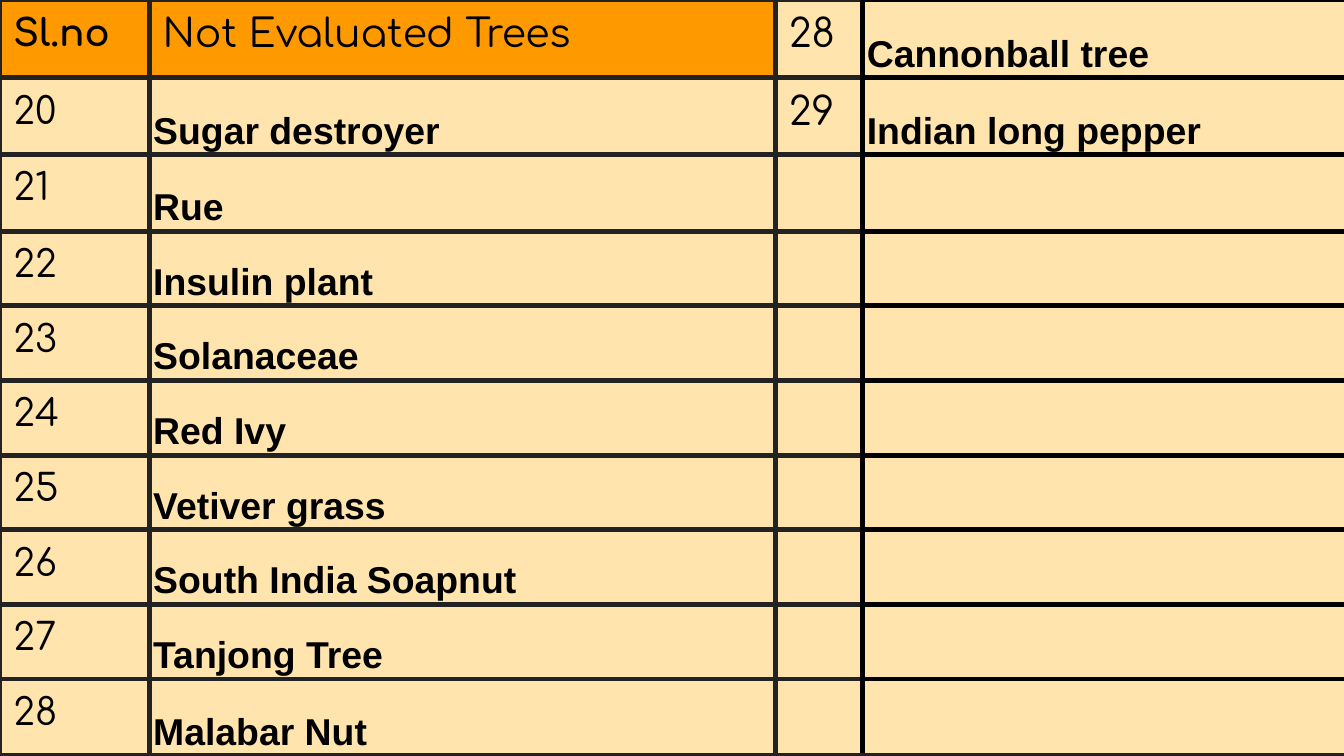
from lxml.etree import SubElement
from pptx import Presentation
from pptx.dml.color import RGBColor
from pptx.enum.text import MSO_ANCHOR
from pptx.oxml.ns import qn
from pptx.util import Inches, Pt

HUES = {"page": "FFE4AE", "head": "FF9900", "ink": "000000", "rule": "222222"}
WIDE = 10
HIGH = WIDE * 9 / 16
COLS = [1.11, 4.66, 0.65, 3.65]
ROWS = [0.58, 0.57, 0.57] + [5 / 9] * 6 + [0.57]
TREES = ["Sugar destroyer", "Rue", "Insulin plant", "Solanaceae", "Red Ivy",
         "Vetiver grass", "South India Soapnut", "Tanjong Tree", "Malabar Nut"]
MORE = ["Cannonball tree", "Indian long pepper"]


class Deck:
    def __init__(self, wide, high):
        self.prs = Presentation()
        self.prs.slide_width = Inches(wide)
        self.prs.slide_height = Inches(high)
        self.slide = self.prs.slides.add_slide(self.prs.slide_layouts[6])
        self.paint(self.slide.background.fill, "page")

    def paint(self, fill, hue):
        fill.solid()
        fill.fore_color.rgb = RGBColor.from_string(HUES[hue])

    def table(self, cols, rows):
        frame = self.slide.shapes.add_table(
            len(rows), len(cols), 0, 0, Inches(sum(cols)), Inches(sum(rows)))
        grid = frame.table
        grid.first_row = grid.horz_banding = False
        for col, wide in zip(grid.columns, cols):
            col.width = Inches(wide)
        for row, high in zip(grid.rows, rows):
            row.height = Inches(high)
        return grid

    def edge(self, cell, hues):
        props = cell._tc.get_or_add_tcPr()
        for side, hue in zip("LRTB", hues):
            line = SubElement(props, qn(f"a:ln{side}"), w=str(Pt(3)))
            fill = SubElement(line, qn("a:solidFill"))
            SubElement(fill, qn("a:srgbClr"), val=HUES[hue])

    def text(self, cell, words, size, bold, font="Comfortaa"):
        run = cell.text_frame.paragraphs[0].add_run()
        run.text = words
        run.font.name = font
        run.font.size = Pt(size)
        run.font.bold = bold
        run.font.color.rgb = RGBColor.from_string(HUES["ink"])

    def label(self, cell, words, size, bold=False):
        cell.margin_left = cell.margin_right = Inches(0.1)
        cell.margin_top = cell.margin_bottom = Inches(0.1)
        self.text(cell, words, size, bold)

    def name(self, cell, words):
        cell.margin_left = cell.margin_right = Inches(0.03)
        cell.margin_top = cell.margin_bottom = Inches(0.02)
        cell.vertical_anchor = MSO_ANCHOR.BOTTOM
        cell.text_frame.paragraphs[0].line_spacing = 1.15
        self.text(cell, words, 20, True, "Arial")


def main():
    deck = Deck(WIDE, HIGH)
    grid = deck.table(COLS, ROWS)
    last = len(ROWS) - 1
    for row in range(len(ROWS)):
        for col in range(len(COLS)):
            cell = grid.cell(row, col)
            hues = ["rule"] * 4
            if col == 2:
                hues[1] = "ink"
            elif col == 3:
                hues = ["ink"] * 3 + ["rule" if row == last else "ink"]
            deck.edge(cell, hues)
            if row == 0 and col < 2:
                deck.paint(cell.fill, "head")
            else:
                cell.fill.background()

    deck.label(grid.cell(0, 0), "Sl.no", 20, True)
    deck.label(grid.cell(0, 1), "Not Evaluated Trees", 21)
    for row, tree in enumerate(TREES, 1):
        deck.label(grid.cell(row, 0), str(19 + row), 20)
        deck.name(grid.cell(row, 1), tree)
    for row, tree in enumerate(MORE):
        deck.label(grid.cell(row, 2), str(28 + row), 21)
        deck.name(grid.cell(row, 3), tree)
    deck.prs.save("out.pptx")


if __name__ == "__main__":
    main()
